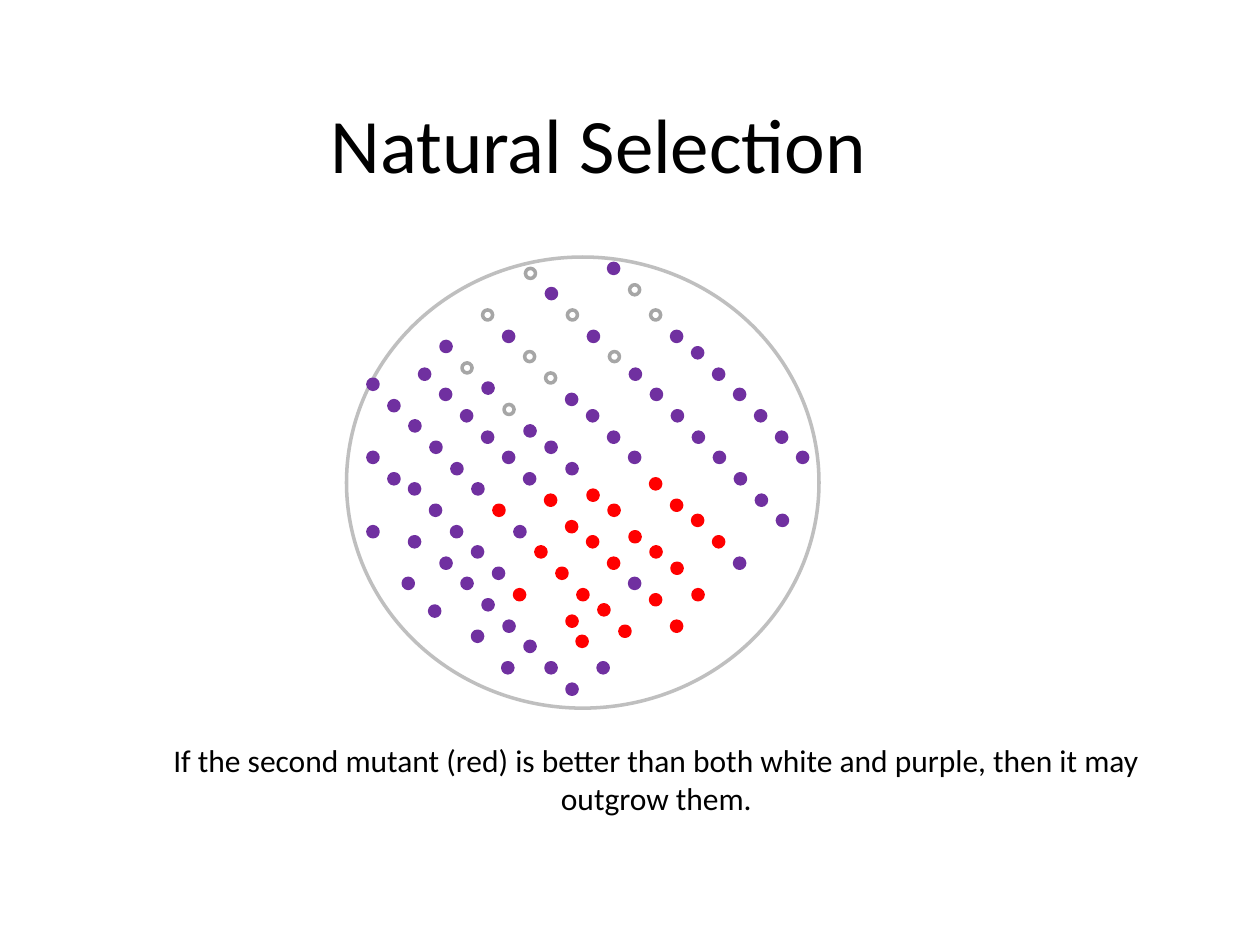
from typing import NamedTuple

from pptx import Presentation
from pptx.dml.color import RGBColor
from pptx.enum.shapes import MSO_SHAPE
from pptx.enum.text import MSO_ANCHOR, PP_ALIGN
from pptx.util import Inches, Pt

OVAL = MSO_SHAPE.OVAL
CENTER = PP_ALIGN.CENTER
TOP, MIDDLE = MSO_ANCHOR.TOP, MSO_ANCHOR.MIDDLE

WHITE, BLACK, PURPLE, RED = "FFFFFF", "000000", "7030A0", "FF0000"
DISH_LINE, WHITE_LINE = "BFBFBF", "A6A6A6"
CELL_SIZE = 0.08
CELL_STEP = 1 / 6


class Strain(NamedTuple):
    fill: str
    line: str


class CellRow(NamedTuple):
    """A diagonal of cells, one strain letter and one top for each."""
    left: float
    strains: str
    tops: list[float]


STRAINS = {
    "W": Strain(WHITE, WHITE_LINE),
    "P": Strain(PURPLE, PURPLE),
    "R": Strain(RED, RED),
}

CELL_ROWS = [
    CellRow(3.33, "PPPPPPRRRRPRR", [2.93, 3.09, 3.26, 3.43, 3.59, 3.76, 3.93,
                                    4.14, 4.26, 4.43, 4.59, 4.72, 4.93]),
    CellRow(3.5, "PWPWPPPRRRRRR", [2.71, 2.88, 3.04, 3.21, 3.38, 3.51, 3.68,
                                   3.89, 4.01, 4.22, 4.34, 4.47, 4.68]),
    CellRow(3.83, "WPWWPPPPRRRRP", [2.46, 2.63, 2.79, 2.96, 3.13, 3.26, 3.43,
                                    3.59, 3.8, 3.97, 4.09, 4.26, 4.43]),
    CellRow(4.17, "WPWPWPPPPPPPP", [2.13, 2.29, 2.46, 2.63, 2.79, 2.93, 3.09,
                                    3.26, 3.43, 3.59, 3.76, 3.93, 4.09]),
    CellRow(4.83, "PWWPPPPPPP", [2.09, 2.26, 2.46, 2.63, 2.76, 2.93, 3.09,
                                 3.26, 3.43, 3.59]),
    CellRow(3.5, "PPPPPPP", [4.43, 4.59, 4.76, 4.93, 5.09, 5.26, 5.43]),
    CellRow(3.75, "PPR", [4.34, 4.51, 4.68]),
    CellRow(2.92, "PPPPPPRPRRRRR", [3.01, 3.18, 3.34, 3.51, 3.68, 3.84, 4.01,
                                    4.18, 4.34, 4.51, 4.68, 4.8, 4.97]),
    CellRow(3.25, "PPP", [3.84, 4.01, 4.18]),
    CellRow(2.92, "PP", [3.59, 3.76]),
    CellRow(4.58, "RP", [5.05, 5.26]),
    CellRow(2.92, "P", [4.18]),
    CellRow(3.2, "P", [4.59]),
    CellRow(3.25, "P", [4.26]),
    CellRow(3.41, "P", [4.81]),
    CellRow(3.75, "P", [5.01]),
    CellRow(3.99, "P", [5.26]),
    CellRow(4.5, "R", [4.89]),
]


def rgb(value: str) -> RGBColor:
    return RGBColor.from_string(value)


def add_oval(slide, left: float, top: float, width: float, height: float,
             fill: str, line: str):
    sp = slide.shapes.add_shape(OVAL, Inches(left), Inches(top),
                                Inches(width), Inches(height))
    sp.shadow.inherit = False
    sp.fill.solid()
    sp.fill.fore_color.rgb = rgb(fill)
    sp.line.color.rgb = rgb(line)
    sp.line.width = Pt(2)
    return sp


def add_cells(slide, row: CellRow) -> None:
    for i, (key, top) in enumerate(zip(row.strains, row.tops)):
        strain = STRAINS[key]
        add_oval(slide, row.left + i * CELL_STEP, top, CELL_SIZE, CELL_SIZE,
                 strain.fill, strain.line)


def add_text(slide, text: str, left: float, top: float, width: float,
             height: float, *, size: float, anchor=TOP, align=CENTER,
             font: str = "Calibri", color: str = BLACK):
    sp = slide.shapes.add_textbox(Inches(left), Inches(top),
                                  Inches(width), Inches(height))
    tf = sp.text_frame
    tf.word_wrap = True
    tf.vertical_anchor = anchor
    p = tf.paragraphs[0]
    p.alignment = align
    r = p.add_run()
    r.text = text
    r.font.size = Pt(size)
    r.font.name = font
    r.font.color.rgb = rgb(color)
    return sp


def main() -> None:
    prs = Presentation()
    prs.slide_width, prs.slide_height = Inches(10), Inches(7.5)
    slide = prs.slides.add_slide(prs.slide_layouts[6])

    add_text(slide, "Natural Selection", 0.5, 0.33, 8.5, 1.61,
             size=44, anchor=MIDDLE)
    add_oval(slide, 2.75, 2.04, 3.75, 3.58, WHITE, DISH_LINE)
    for row in CELL_ROWS:
        add_cells(slide, row)
    add_text(slide, "If the second mutant (red) is better than both white and "
             "purple, then it may outgrow them.", 1.21, 5.83, 8, 0.71, size=18)

    prs.save("out.pptx")


if __name__ == "__main__":
    main()
